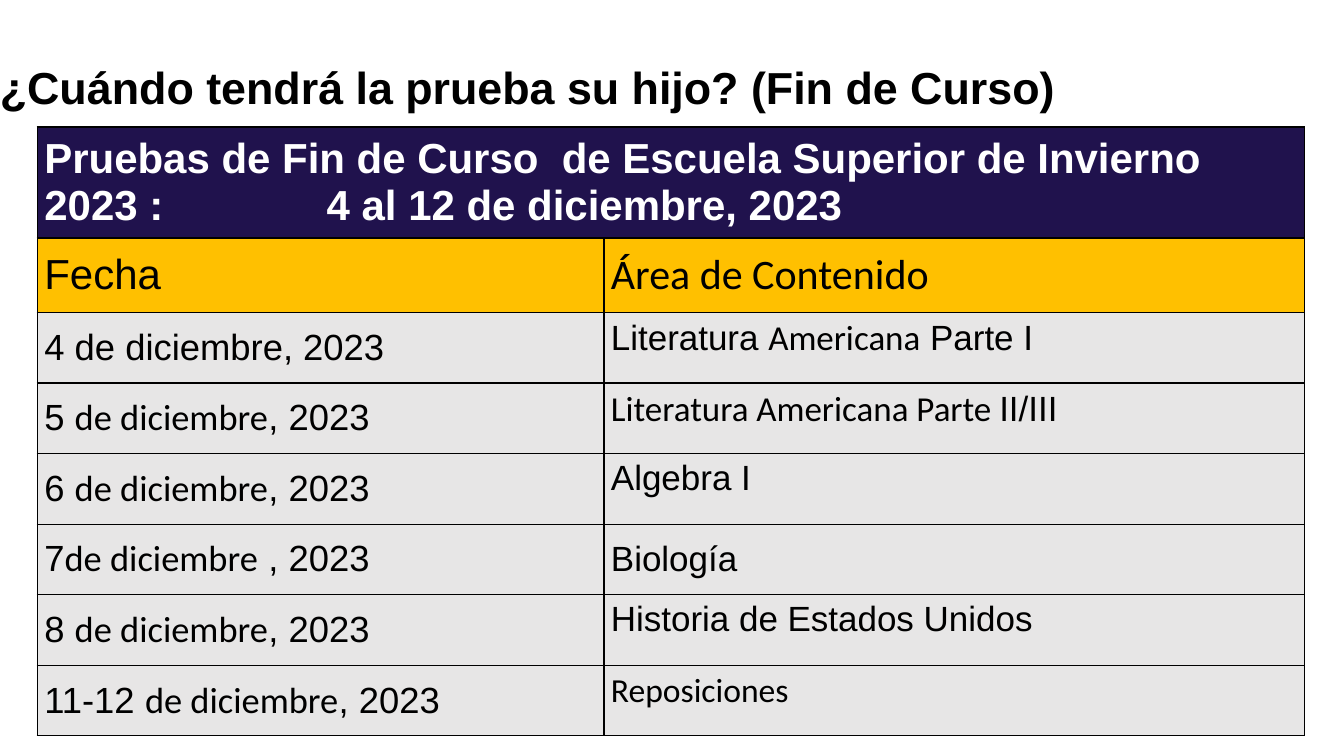
from lxml import etree
from pptx import Presentation
from pptx.dml.color import RGBColor
from pptx.enum.text import MSO_ANCHOR
from pptx.oxml.ns import qn
from pptx.util import Inches, Pt

TOP, MIDDLE = MSO_ANCHOR.TOP, MSO_ANCHOR.MIDDLE
SANS, BODY = "Arial", "Calibri"
BLACK, WHITE, NAVY, GOLD, GRAY = "000000", "FFFFFF", "20124D", "FFC000", "E7E6E6"


def color(value):
    return RGBColor.from_string(value)


def add_runs(paragraph, runs, size, bold=False, text_color=BLACK):
    for text, font_name in runs:
        run = paragraph.add_run()
        run.text = text
        for name, value in {"name": font_name, "size": Pt(size), "bold": bold}.items():
            setattr(run.font, name, value)
        run.font.color.rgb = color(text_color)


presentation = Presentation()
presentation.slide_width, presentation.slide_height = Inches(13.33), Inches(7.5)
slide = presentation.slides.add_slide(presentation.slide_layouts[6])

# Title
title = slide.shapes.add_textbox(Inches(-0.1), Inches(0.6), Inches(11.5), Inches(0.88))
title.text_frame.word_wrap = True
title.text_frame.vertical_anchor = TOP
paragraph = title.text_frame.paragraphs[0]
paragraph.line_spacing = 0.9
add_runs(paragraph, [("¿Cuándo tendrá la prueba su hijo? (Fin de Curso)", SANS)], 32, True)

# Schedule: date runs, subject runs, subject size, subject anchor
december, year = ("de diciembre", BODY), (", 2023", SANS)
schedule = [
    ([("4 de diciembre, 2023", SANS)],
     [("Literatura ", SANS), ("Americana", BODY), (" Parte I", SANS)], 25, TOP),
    ([("5 ", SANS), december, year],
     [("Literatura Americana Parte ", BODY), ("II/III", SANS)], 25, TOP),
    ([("6 ", SANS), december, year], [("Algebra I", SANS)], 25, TOP),
    ([("7", SANS), december, (" , 2023", SANS)], [("Biología", SANS)], 25, MIDDLE),
    ([("8 ", SANS), december, year], [("Historia de Estados Unidos", SANS)], 25, TOP),
    ([("11-12 ", SANS), december, year], [("Reposiciones", BODY)], 24, TOP),
]

# Table grid
row_heights = [0.9, 0.74] + [0.7] * len(schedule)
table = slide.shapes.add_table(
    len(row_heights), 2, Inches(0.37), Inches(1.26), Inches(12.57), Inches(sum(row_heights))
).table
for column, width in zip(table.columns, (5.62, 6.95)):
    column.width = Inches(width)
for row, height in zip(table.rows, row_heights):
    row.height = Inches(height)
table.cell(0, 0).merge(table.cell(0, 1))

# Cell fills, margins and borders
cell_format = {
    "margin_left": Inches(0.07), "margin_right": Inches(0.07),
    "margin_top": Inches(0.05), "margin_bottom": Inches(0.05),
    "vertical_anchor": MIDDLE,
}
for row, fill in zip(table.rows, [NAVY, GOLD] + [GRAY] * len(schedule)):
    for cell in row.cells:
        for name, value in cell_format.items():
            setattr(cell, name, value)
        properties = cell._tc.get_or_add_tcPr()
        for side in ("a:lnL", "a:lnR", "a:lnT", "a:lnB"):
            line = etree.SubElement(properties, qn(side), w=str(Pt(1)))
            solid = etree.SubElement(line, qn("a:solidFill"))
            etree.SubElement(solid, qn("a:srgbClr"), val=BLACK)
        cell.fill.solid()
        cell.fill.fore_color.rgb = color(fill)

# Banner, with a tab stop before the dates
paragraph = table.cell(0, 0).text_frame.paragraphs[0]
tabs = etree.SubElement(paragraph._p.get_or_add_pPr(), qn("a:tabLst"))
etree.SubElement(tabs, qn("a:tab"), pos=str(Inches(2.8)), algn="l")
banner = "Pruebas de Fin de Curso  de Escuela Superior de Invierno 2023 :\t4 al 12 de diciembre, 2023"
add_runs(paragraph, [(banner, SANS)], 30, True, WHITE)

# Column headings
for column, heading in enumerate([("Fecha", SANS), ("Área de Contenido", BODY)]):
    add_runs(table.cell(1, column).text_frame.paragraphs[0], [heading], 30)

# Dates and subjects
for row, (date, subject, size, anchor) in enumerate(schedule, start=2):
    add_runs(table.cell(row, 0).text_frame.paragraphs[0], date, 26)
    add_runs(table.cell(row, 1).text_frame.paragraphs[0], subject, size)
    table.cell(row, 1).vertical_anchor = anchor

presentation.save("out.pptx")
